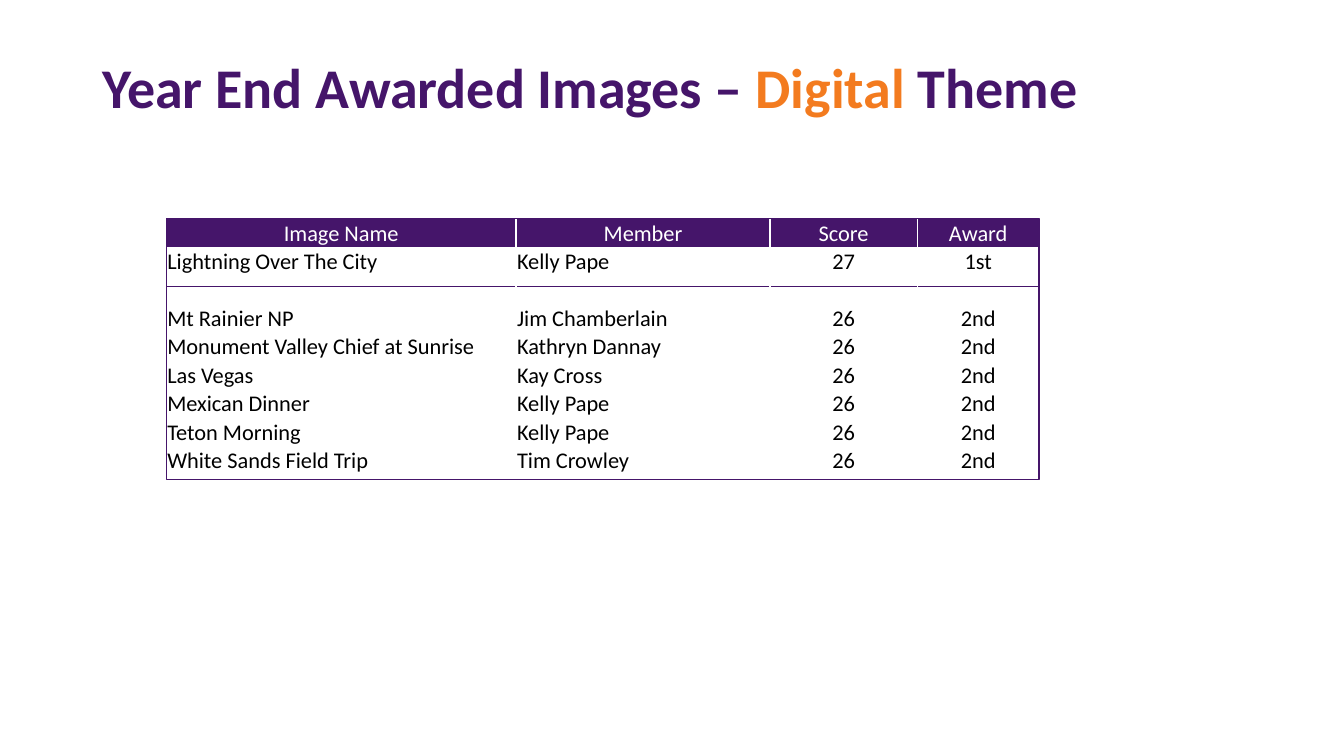
from lxml import etree
from pptx import Presentation
from pptx.dml.color import RGBColor
from pptx.enum import shapes, text
from pptx.oxml import ns
from pptx.util import Pt

PURPLE = RGBColor(0x45, 0x15, 0x6A)
ORANGE = RGBColor(0xF3, 0x7B, 0x1F)
WHITE = RGBColor(0xFF, 0xFF, 0xFF)
BLACK = RGBColor(0, 0, 0)
FONT = "Calibri"
TABLE_SIZE = 16

LEFT, TOP, WIDTH = 118.8, 156.24, 623.52
COLUMN_WIDTHS = [249.84, 181.44, 105.12, 87.12]
ROW_HEIGHT = 20.3
DIVIDER_Y = 204.48
FRAME_HEIGHT = 186.48

ROWS = [
    ("Image Name", "Member", "Score", "Award"),
    ("Lightning Over The City", "Kelly Pape", "27", "1st"),
    ("", "", "", ""),
    ("Mt Rainier NP", "Jim Chamberlain", "26", "2nd"),
    ("Monument Valley Chief at Sunrise", "Kathryn Dannay", "26", "2nd"),
    ("Las Vegas", "Kay Cross", "26", "2nd"),
    ("Mexican Dinner", "Kelly Pape", "26", "2nd"),
    ("Teton Morning", "Kelly Pape", "26", "2nd"),
    ("White Sands Field Trip", "Tim Crowley", "26", "2nd"),
]


def add_text(p, content, size=TABLE_SIZE, color=BLACK, bold=False):
    r = p.add_run()
    r.text = content
    r.font.name = FONT
    r.font.size = Pt(size)
    r.font.bold = bold
    r.font.color.rgb = color


def add_title(slide):
    sp = slide.shapes.title
    sp.left, sp.top, sp.width, sp.height = Pt(66), Pt(28.8), Pt(828), Pt(71.3)
    tf = sp.text_frame
    tf.word_wrap = True
    tf.auto_size = text.MSO_AUTO_SIZE.NONE
    tf.vertical_anchor = text.MSO_ANCHOR.MIDDLE
    p = tf.paragraphs[0]
    p.alignment = text.PP_ALIGN.LEFT
    p.line_spacing = 0.9
    for content, color in [("Year End Awarded Images – ", PURPLE),
                           ("Digital", ORANGE), (" Theme", PURPLE)]:
        add_text(p, content, size=40, color=color, bold=True)


def add_divider(slide):
    line = slide.shapes.add_connector(
        shapes.MSO_CONNECTOR.STRAIGHT,
        Pt(LEFT), Pt(DIVIDER_Y), Pt(LEFT + WIDTH), Pt(DIVIDER_Y))
    line.line.color.rgb = PURPLE
    line.line.width = Pt(1)
    etree.SubElement(line._element.spPr, ns.qn("a:effectLst"))


def set_borders(cell, color, width=1):
    tc_pr = cell._tc.get_or_add_tcPr()
    for side in ("lnL", "lnR", "lnT", "lnB"):
        ln = etree.SubElement(tc_pr, ns.qn(f"a:{side}"), w=str(Pt(width)))
        fill = etree.SubElement(ln, ns.qn("a:solidFill"))
        etree.SubElement(fill, ns.qn("a:srgbClr"), val=str(color))


def fill_cell(cell, content, header, centered):
    cell.margin_left = cell.margin_right = cell.margin_top = Pt(0.72)
    cell.margin_bottom = Pt(0)
    cell.vertical_anchor = text.MSO_ANCHOR.BOTTOM
    set_borders(cell, WHITE)
    if header:
        cell.fill.solid()
        cell.fill.fore_color.rgb = PURPLE
    else:
        cell.fill.background()
    p = cell.text_frame.paragraphs[0]
    p.alignment = text.PP_ALIGN.CENTER if centered else text.PP_ALIGN.LEFT
    if content:
        add_text(p, content, color=WHITE if header else BLACK)
    else:
        # An empty cell takes its line height from the end mark
        etree.SubElement(p._p, ns.qn("a:endParaRPr"), sz=str(TABLE_SIZE * 100))


def add_awards_table(slide):
    table = slide.shapes.add_table(
        len(ROWS), len(COLUMN_WIDTHS), Pt(LEFT), Pt(TOP),
        Pt(WIDTH), Pt(ROW_HEIGHT * len(ROWS))).table
    table.first_row = table.horz_banding = False
    for column, width in zip(table.columns, COLUMN_WIDTHS):
        column.width = Pt(width)
    for i, values in enumerate(ROWS):
        table.rows[i].height = Pt(ROW_HEIGHT)
        for j, value in enumerate(values):
            fill_cell(table.cell(i, j), value,
                      header=i == 0, centered=i == 0 or j >= 2)


def add_frame(slide):
    sp = slide.shapes.add_shape(shapes.MSO_SHAPE.RECTANGLE, Pt(LEFT), Pt(TOP),
                                Pt(WIDTH), Pt(FRAME_HEIGHT))
    sp.shadow.inherit = False
    sp.fill.background()
    sp.line.color.rgb = PURPLE
    sp.line.width = Pt(1)


def main():
    prs = Presentation()
    prs.slide_width, prs.slide_height = Pt(960), Pt(540)
    slide = prs.slides.add_slide(prs.slide_layouts.get_by_name("Title Only"))
    add_title(slide)
    add_divider(slide)
    add_awards_table(slide)
    add_frame(slide)
    prs.save("out.pptx")


if __name__ == "__main__":
    main()
